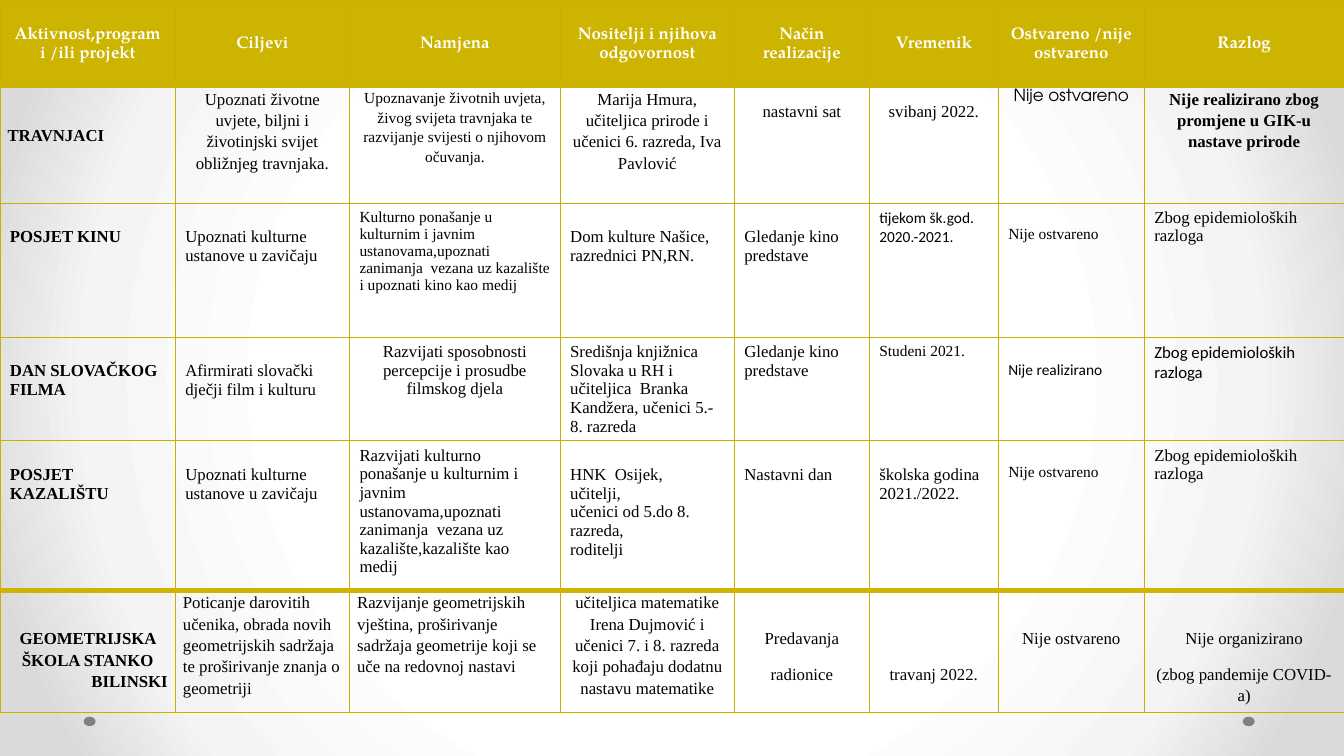
from dataclasses import dataclass

from pptx import Presentation
from pptx import util as u
from pptx.dml.color import RGBColor
from pptx.enum import shapes, text
from pptx.oxml import parse_xml
from pptx.oxml.ns import nsdecls

LEFT, CENTER, RIGHT = text.PP_ALIGN.LEFT, text.PP_ALIGN.CENTER, text.PP_ALIGN.RIGHT


@dataclass(frozen=True)
class Theme:
    gold: str = "CCB400"
    rule: str = "C8B000"
    ink: str = "000000"
    white: str = "FFFFFF"
    dot: str = "808080"
    glow: tuple = ((50, "FFFFFF"), (76, "F4F4F4"), (92, "DADADA"))
    serif: str = "Times New Roman"
    sans: str = "Calibri"
    round: str = "TeX Gyre Adventor"
    title: str = "TeX Gyre Pagella"
    normal: float = 12
    small: float = 11
    thin: float = 0.75
    thick: float = 4


THEME = Theme()


@dataclass(frozen=True)
class Layout:
    side: float = 0.25
    top: float = 0.13
    leading: object = 1.0
    after: float = 0


HEADER = Layout(0.1, 0, 1.15)
LOOSE = Layout(0.19, 0, 1.15, 10)
EXACT = Layout(0.19, 0, u.Pt(12.1))
PLAIN = Layout()


@dataclass(frozen=True)
class Entry:
    lines: tuple
    drop: float = 0
    align: object = LEFT
    size: float = THEME.normal
    font: str = THEME.serif
    bold: bool = False
    color: str = THEME.ink
    layout: Layout = PLAIN


def entry(*lines, **style):
    return Entry(lines, **style)


def heading(words):
    return entry(words, align=CENTER, font=THEME.title, bold=True, color=THEME.white, layout=HEADER)


def loose(*lines, align=CENTER, **style):
    return entry(*lines, align=align, layout=LOOSE, **style)


def exact(words, **style):
    return entry(words, align=CENTER, layout=EXACT, **style)


LINE, SMALL_LINE, LOOSE_LINE, EXACT_LINE = 0.49, 0.45, 0.91, 0.43
SMALL = {"size": THEME.small}
SMALL_SANS = {"size": THEME.small, "font": THEME.sans}

COLUMNS = (4.42, 4.39, 5.31, 4.39, 3.4, 3.25, 3.68, 5.03)
ROWS = (2.2, 2.92, 3.38, 2.57, 3.78, 3.07)

HEADINGS = ("Aktivnost,program i /ili projekt", "Ciljevi", "Namjena",
            "Nositelji i njihova odgovornost", "Način realizacije", "Vremenik",
            "Ostvareno /nije ostvareno", "Razlog")

ACTIVITIES = (
    tuple(heading(words) for words in HEADINGS),
    (
        loose("TRAVNJACI", drop=LOOSE_LINE, align=LEFT, bold=True),
        loose("Upoznati životne uvjete, biljni i životinjski svijet obližnjeg travnjaka."),
        loose("Upoznavanje životnih uvjeta, živog svijeta travnjaka te razvijanje svijesti "
              "o njihovom očuvanja.", **SMALL),
        loose("Marija Hmura, učiteljica prirode i učenici 6. razreda, Iva Pavlović"),
        exact("nastavni sat", drop=EXACT_LINE),
        exact("svibanj 2022.", drop=EXACT_LINE),
        exact("Nije ostvareno", font=THEME.round),
        loose("Nije realizirano zbog promjene u GIK-u nastave prirode", bold=True),
    ),
    (
        entry("POSJET KINU", drop=LINE, bold=True),
        entry("Upoznati kulturne ustanove u zavičaju", drop=LINE),
        entry("Kulturno ponašanje u kulturnim i javnim ustanovama,upoznati zanimanja  vezana uz "
              "kazalište i upoznati kino kao medij", **SMALL),
        entry("Dom kulture Našice, razrednici PN,RN.", drop=LINE),
        entry("Gledanje kino predstave", drop=LINE),
        entry("tijekom šk.god.", "2020.-2021.", **SMALL_SANS),
        entry("Nije ostvareno", drop=SMALL_LINE, **SMALL),
        entry("Zbog epidemioloških razloga"),
    ),
    (
        entry("DAN SLOVAČKOG FILMA", drop=LINE, bold=True),
        entry("Afirmirati slovački dječji film i kulturu", drop=LINE),
        entry("Razvijati sposobnosti percepcije i prosudbe filmskog djela", align=CENTER),
        entry("Središnja knjižnica Slovaka u RH i učiteljica  Branka Kandžera, učenici 5.-8. razreda"),
        entry("Gledanje kino predstave"),
        entry("Studeni 2021.", **SMALL),
        entry("Nije realizirano", drop=SMALL_LINE, **SMALL_SANS),
        entry("Zbog epidemioloških razloga", font=THEME.sans),
    ),
    (
        entry("POSJET KAZALIŠTU", drop=LINE, bold=True),
        entry("Upoznati kulturne ustanove u zavičaju", drop=LINE),
        entry("Razvijati kulturno ponašanje u kulturnim i javnim ustanovama,upoznati zanimanja  "
              "vezana uz kazalište,kazalište kao medij"),
        entry("HNK  Osijek,", "učitelji,", "učenici od 5.do 8. razreda,", "roditelji", drop=LINE),
        entry("Nastavni dan", drop=LINE),
        entry("školska godina 2021./2022.", drop=LINE),
        entry("Nije ostvareno", drop=SMALL_LINE, **SMALL),
        entry("Zbog epidemioloških razloga"),
    ),
    (
        loose("GEOMETRIJSKA ŠKOLA STANKO", "BILINSKI", drop=LOOSE_LINE, bold=True),
        loose("Poticanje darovitih učenika, obrada novih geometrijskih sadržaja te proširivanje "
              "znanja o geometriji", align=LEFT),
        loose("Razvijanje geometrijskih vještina, proširivanje sadržaja geometrije koji se uče "
              "na redovnoj nastavi", align=LEFT),
        loose("učiteljica matematike Irena Dujmović i\nučenici 7. i 8. razreda koji pohađaju "
              "dodatnu nastavu matematike"),
        loose("Predavanja", "radionice", drop=LOOSE_LINE),
        loose("travanj 2022.", drop=2 * LOOSE_LINE),
        loose("Nije ostvareno", drop=LOOSE_LINE),
        loose("Nije organizirano", "(zbog pandemije COVID-a)", drop=LOOSE_LINE),
    ),
)


class Board:
    def __init__(self, slide, theme):
        self.slide, self.theme = slide, theme

    def backdrop(self):
        stops = "".join(f'<a:gs pos="{place * 1000}"><a:srgbClr val="{color}"/></a:gs>'
                        for place, color in self.theme.glow)
        self.slide.element.cSld.insert(0, parse_xml(
            f'<p:bg {nsdecls("p", "a")}><p:bgPr><a:gradFill rotWithShape="1"><a:gsLst>{stops}</a:gsLst>'
            '<a:path path="circle"><a:fillToRect l="50000" t="50000" r="50000" b="50000"/></a:path>'
            '</a:gradFill><a:effectLst/></p:bgPr></p:bg>'))

    def dot(self, left, top):
        dot = self.slide.shapes.add_shape(shapes.MSO_SHAPE.OVAL, u.Cm(left), u.Cm(top), u.Cm(0.3), u.Cm(0.24))
        dot.shadow.inherit = False
        dot.fill.solid()
        dot.fill.fore_color.rgb = RGBColor.from_string(self.theme.dot)
        dot.line.fill.background()

    def table(self, entries, columns, rows):
        grid = self.slide.shapes.add_table(len(rows), len(columns), 0, 0,
                                           u.Cm(sum(columns)), u.Cm(sum(rows))).table
        grid.first_row = grid.horz_banding = False
        for column, width in zip(grid.columns, columns):
            column.width = u.Cm(width)
        for row, height in zip(grid.rows, rows):
            row.height = u.Cm(height)
        last = len(rows) - 1
        for r, row in enumerate(entries):
            for c, content in enumerate(row):
                cell = grid.cell(r, c)
                self.borders(cell, {"T": r == last, "B": r == last - 1})
                self.shade(cell, r == 0)
                self.letter(cell, content)
        bilinski = grid.cell(last, 0).text_frame.paragraphs
        bilinski[0].space_after = u.Pt(0)
        bilinski[1].alignment = RIGHT

    def borders(self, cell, heavy):
        for side in "LRTB":
            color, width = ((self.theme.gold, self.theme.thick) if heavy.get(side)
                            else (self.theme.rule, self.theme.thin))
            cell._tc.get_or_add_tcPr().append(parse_xml(
                f'<a:ln{side} {nsdecls("a")} w="{u.Pt(width)}"><a:solidFill>'
                f'<a:srgbClr val="{color}"/></a:solidFill></a:ln{side}>'))

    def shade(self, cell, is_heading):
        if is_heading:
            cell.fill.solid()
            cell.fill.fore_color.rgb = RGBColor.from_string(self.theme.gold)
            cell.vertical_anchor = text.MSO_ANCHOR.MIDDLE
        else:
            cell.fill.background()

    def letter(self, cell, content):
        layout = content.layout
        cell.margin_left = cell.margin_right = u.Cm(layout.side)
        cell.margin_top, cell.margin_bottom = u.Cm(layout.top + content.drop), u.Cm(layout.top)
        frame = cell.text_frame
        for i, line in enumerate(content.lines):
            paragraph = frame.add_paragraph() if i else frame.paragraphs[0]
            paragraph.text = line
            paragraph.alignment = content.align
            paragraph.line_spacing = layout.leading
            paragraph.space_after = u.Pt(layout.after)
            font = paragraph.font
            font.name, font.size, font.bold = content.font, u.Pt(content.size), content.bold
            font.color.rgb = RGBColor.from_string(content.color)


def main():
    deck = Presentation()
    deck.slide_width, deck.slide_height = u.Cm(33.87), u.Cm(19.05)
    board = Board(deck.slides.add_slide(deck.slide_layouts[6]), THEME)
    board.backdrop()
    for left in (31.32, 2.11):
        board.dot(left, 18.06)
    board.table(ACTIVITIES, COLUMNS, ROWS)
    deck.save("out.pptx")


if __name__ == "__main__":
    main()
